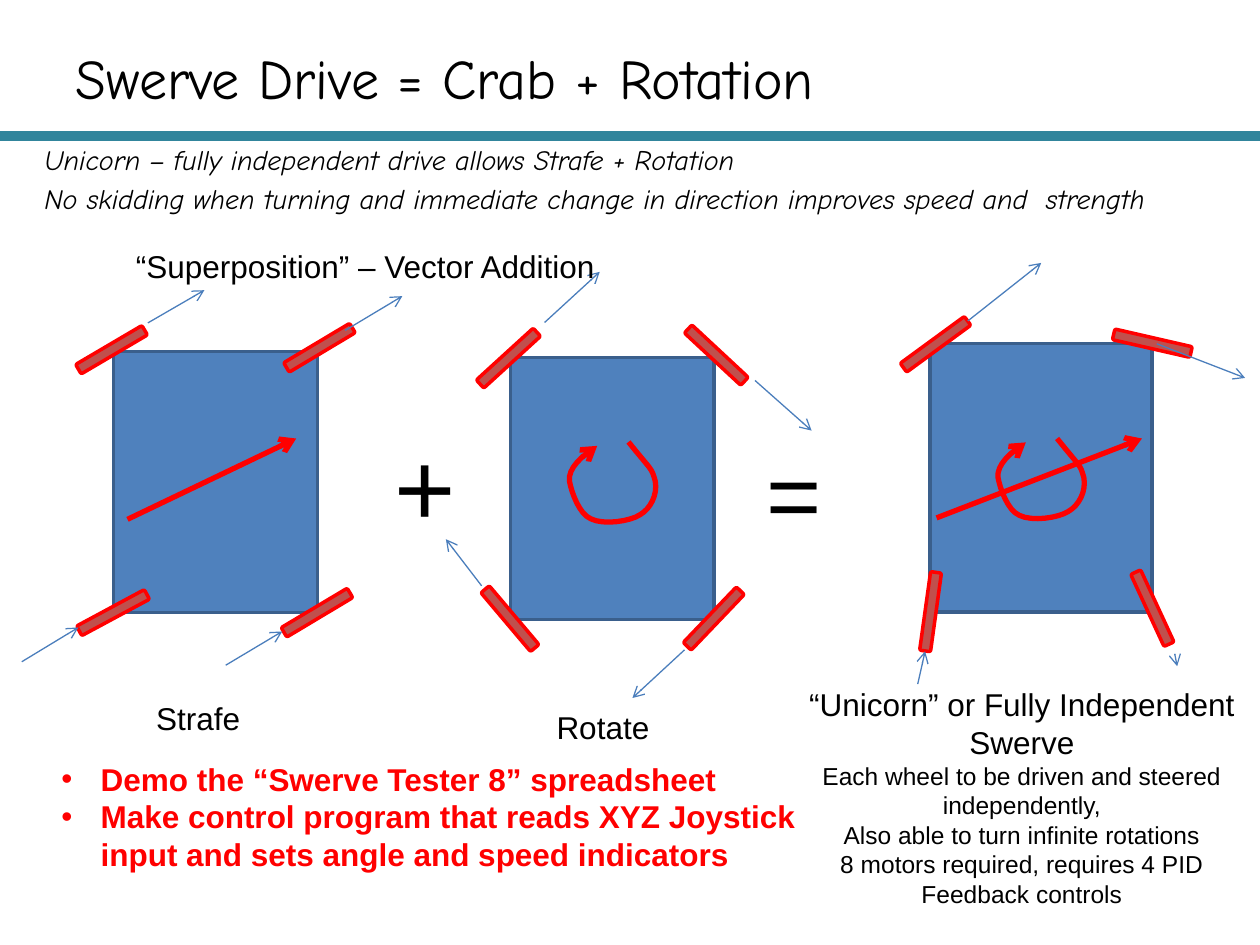
import pptx
import pptx.dml.color
import pptx.enum.shapes
import pptx.enum.text
import pptx.oxml.ns
import pptx.util
from lxml import etree

Cm = pptx.util.Cm
Pt = pptx.util.Pt
SHAPES = pptx.enum.shapes.MSO_SHAPE
ALIGN = pptx.enum.text.PP_ALIGN
ANCHOR = pptx.enum.text.MSO_ANCHOR
qn = pptx.oxml.ns.qn

COLORS = {
    "text": "000000",
    "accent": "FF0000",
    "divider": "31859C",
    "chassis": "4F81BD",
    "chassis_edge": "3A5F8C",
    "wheel": "C0504D",
    "velocity": "4B7EBC",
}

LOOP_START = (0.56, 0.08)
LOOP_CURVES = [
    ((0.25, 0.28), (-0.03, 0.53), (0, 0.79)),
    ((0.05, 1.04), (0.2, 1.45), (0.43, 1.55)),
    ((0.69, 1.68), (1.22, 1.6), (1.42, 1.47)),
    ((1.63, 1.35), (1.78, 1.07), (1.73, 0.79)),
    ((1.65, 0.51), (1.68, 0.61), (1.19, 0)),
]

STRAFE = {
    "box": (2.29, 7.09, 4.11, 5.26),
    "wheel_size": (1.55, 0.22),
    "wheels": [(-0.04, -0.04, 329.5), (4.15, -0.08, 329.1),
               (-0.01, 5.26, 331.7), (4.1, 5.26, 329.1)],
    "velocities": [(0.69, -0.58, 1.83, -1.24), (4.67, -0.43, 5.82, -1.12),
                   (-1.85, 6.25, -0.71, 5.56), (2.26, 6.32, 3.4, 5.64)],
    "motion": (0.28, 3.38, 3.68, 1.75),
}
ROTATE = {
    "box": (10.29, 7.21, 4.11, 5.28),
    "wheel_size": (1.55, 0.22),
    "wheels": [(-0.04, 0.01, 317.6), (4.15, -0.05, 42.9),
               (-0.01, 5.26, 229.8), (4.1, 5.26, 313.7)],
    "velocities": [(0.69, -0.71, 1.8, -1.73), (4.93, 0.46, 6.07, 1.47),
                   (-0.58, 4.6, -1.3, 3.66), (3.51, 5.89, 2.46, 6.86)],
    "loop": (1.19, 1.7),
}
SWERVE = {
    "box": (18.75, 6.93, 4.47, 5.41),
    "wheel_size": (1.6, 0.22),
    "wheels": [(0.11, 0.01, 323.8), (4.48, -0.01, 12.9),
               (0.01, 5.4, 277.9), (4.48, 5.33, 245.2)],
    "velocities": [(0.76, -0.46, 2.24, -1.63), (4.57, 0, 6.35, 0.69),
                   (-0.25, 6.86, -0.1, 6.2), (4.93, 6.25, 4.98, 6.5)],
    "motion": (0.13, 3.51, 4.27, 1.91),
    "loop": (1.37, 1.91),
}


def rgb(name):
    return pptx.dml.color.RGBColor.from_string(COLORS[name])


def set_line(shape, color, width):
    shape.line.color.rgb = rgb(color)
    shape.line.width = Pt(width)


def add_arrowhead(shape, end):
    line = shape.line._get_or_add_ln()
    etree.SubElement(line, qn("a:" + end), type="arrow")


def add_line(slide, start, end, color, width, arrow=True):
    connector = slide.shapes.add_connector(
        pptx.enum.shapes.MSO_CONNECTOR.STRAIGHT,
        *(Cm(value) for value in (*start, *end)))
    set_line(connector, color, width)
    if arrow:
        add_arrowhead(connector, "tailEnd")
    etree.SubElement(connector._element.spPr, qn("a:effectLst"))


def add_block(slide, box, preset, fill, edge):
    shape = slide.shapes.add_shape(preset, *(Cm(value) for value in box))
    shape.shadow.inherit = False
    shape.fill.solid()
    shape.fill.fore_color.rgb = rgb(fill)
    set_line(shape, edge, 2)
    return shape


def add_run(paragraph, text, size, font="Arial", color="text", bold=None, italic=None):
    run = paragraph.add_run()
    run.text = text
    run.font.name = font
    run.font.size = Pt(size)
    run.font.color.rgb = rgb(color)
    run.font.bold = bold
    run.font.italic = italic


def place(shape, box):
    shape.left, shape.top, shape.width, shape.height = (Cm(value) for value in box)


def set_bullet(paragraph, indent, symbol=None):
    properties = paragraph._p.get_or_add_pPr()
    properties.set("marL", str(Cm(indent)))
    properties.set("indent", str(-Cm(indent)))
    if symbol:
        etree.SubElement(properties, qn("a:buFont"), typeface="Arial")
        etree.SubElement(properties, qn("a:buChar"), char=symbol)
    else:
        etree.SubElement(properties, qn("a:buNone"))


def add_text(slide, box, lines, wrap=True, align=ALIGN.LEFT, bullet=None, **style):
    frame = slide.shapes.add_textbox(*(Cm(value) for value in box)).text_frame
    frame.word_wrap = wrap
    for index, (text, size) in enumerate(lines):
        paragraph = frame.add_paragraph() if index else frame.paragraphs[0]
        paragraph.alignment = align
        if bullet:
            set_bullet(paragraph, 0.79, bullet)
        add_run(paragraph, text, size, **style)


def add_loop(slide, left, top, steps=8):
    points = []
    start = LOOP_START
    for first, second, end in LOOP_CURVES:
        for step in range(1, steps + 1):
            t = step / steps
            u = 1 - t
            points.append(tuple(
                u**3 * a + 3 * u * u * t * b + 3 * u * t * t * c + t**3 * d
                for a, b, c, d in zip(start, first, second, end)))
        start = end
    builder = slide.shapes.build_freeform(
        Cm(left + LOOP_START[0]), Cm(top + LOOP_START[1]))
    builder.add_line_segments([(Cm(left + x), Cm(top + y)) for x, y in points], close=False)
    loop = builder.convert_to_shape()
    loop.shadow.inherit = False
    loop.fill.background()
    set_line(loop, "accent", 3)
    add_arrowhead(loop, "headEnd")


def add_vehicle(slide, box, wheel_size, wheels, velocities, motion=None, loop=None):
    left, top = box[:2]

    def add_vector(vector, color, width):
        x1, y1, x2, y2 = vector
        add_line(slide, (left + x1, top + y1), (left + x2, top + y2), color, width)

    add_block(slide, box, SHAPES.RECTANGLE, "chassis", "chassis_edge")
    if motion:
        add_vector(motion, "accent", 3)
    width, height = wheel_size
    for x, y, angle in wheels:
        wheel_box = (left + x - width / 2, top + y - height / 2, width, height)
        wheel = add_block(slide, wheel_box, SHAPES.ROUNDED_RECTANGLE, "wheel", "accent")
        wheel.rotation = angle
    if loop:
        add_loop(slide, left + loop[0], top + loop[1])
    for velocity in velocities:
        add_vector(velocity, "velocity", 0.75)


def add_header(slide, title_box, body_box):
    add_line(slide, (0, 2.74), (25.4, 2.74), "divider", 6, arrow=False)
    title = slide.shapes.title
    place(title, title_box)
    title.text_frame.vertical_anchor = ANCHOR.MIDDLE
    paragraph = title.text_frame.paragraphs[0]
    paragraph.alignment = ALIGN.LEFT
    add_run(paragraph, "Swerve Drive = Crab + Rotation", 32, "Comic Neue")

    body = slide.placeholders[1]
    place(body, body_box)
    lines = [
        "Unicorn – fully independent drive allows Strafe + Rotation",
        "No skidding when turning and immediate change in direction improves speed and  strength",
    ]
    for index, text in enumerate(lines):
        paragraph = body.text_frame.add_paragraph() if index else body.text_frame.paragraphs[0]
        set_bullet(paragraph, 0)
        paragraph.space_before = Pt(3.2 * index)
        add_run(paragraph, text, 16, "Comic Neue", italic=True)


def main():
    presentation = pptx.Presentation()
    presentation.slide_width, presentation.slide_height = Cm(25.4), Cm(19.05)
    slide = presentation.slides.add_slide(presentation.slide_layouts[1])
    add_header(slide, (1.27, 0.76, 22.86, 1.57), (0.64, 2.74, 24.13, 1.7))
    for vehicle in (STRAFE, ROTATE, SWERVE):
        add_vehicle(slide, **vehicle)
    add_text(slide, (7.7, 8.38, 1.75, 2.82), [("+", 60)], wrap=False)
    add_text(slide, (15.21, 8.64, 1.63, 2.57), [("=", 54)], wrap=False)
    add_text(slide, (2.9, 13.97, 2.24, 1.02), [("Strafe", 18)], wrap=False)
    add_text(slide, (10.97, 14.15, 2.41, 1.02), [("Rotate", 18)], wrap=False)
    add_text(slide, (2.49, 4.85, 10.44, 1.02), [("“Superposition” – Vector Addition", 18)])
    add_text(slide, (15.8, 13.69, 9.6, 5.38), [
        ("“Unicorn” or Fully Independent Swerve", 18),
        ("Each wheel to be driven and steered independently,", 14),
        ("Also able to turn infinite rotations", 14),
        ("8 motors required, requires 4 PID Feedback controls", 14),
    ], align=ALIGN.CENTER)
    add_text(slide, (0.99, 15.19, 15.88, 2.57), [
        ("Demo the “Swerve Tester 8” spreadsheet", 18),
        ("Make control program that reads XYZ Joystick input and sets angle and speed indicators", 18),
    ], bullet="•", color="accent", bold=True)
    presentation.save("out.pptx")


if __name__ == "__main__":
    main()
